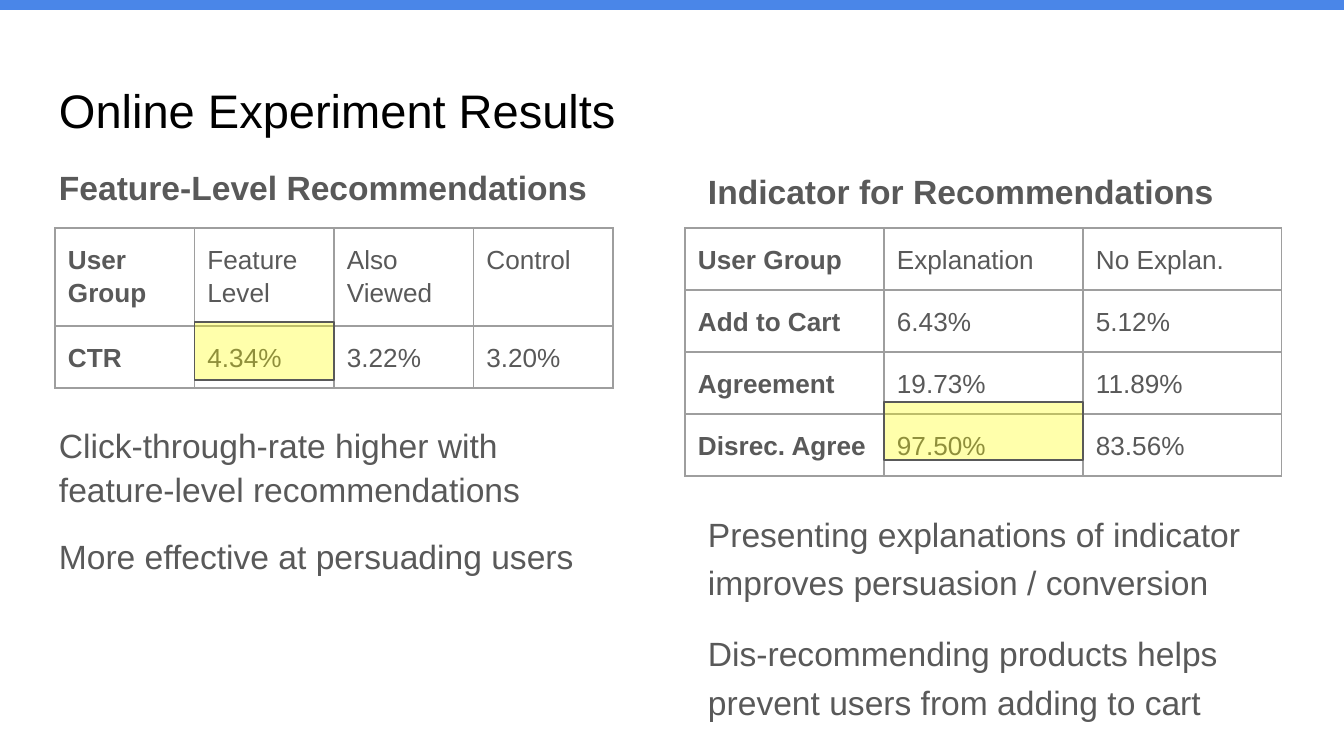
from lxml import etree
from pptx import Presentation
from pptx import util as u
from pptx.dml.color import RGBColor
from pptx.enum import shapes, text
from pptx.oxml import ns

PX = 914400 / 134.4
PAD = 13
GREY, BORDER, BLUE, YELLOW = "595959", "9E9E9E", "4A86E8", "FFFF00"


def px(length):
    return u.Emu(round(length * PX))


def color(value):
    return RGBColor.from_string(value)


def set_all(target, values):
    for name, value in values.items():
        setattr(target, name, value)


def write(frame, lines, size, ink=GREY, bold=False, spacing=1.0, gap=0, anchor=text.MSO_ANCHOR.TOP):
    margins = {f"margin_{side}": px(PAD) for side in ("left", "top", "right", "bottom")}
    set_all(frame, {"word_wrap": True, "vertical_anchor": anchor, **margins})
    for index, line in enumerate(lines):
        para = frame.add_paragraph() if index else frame.paragraphs[0]
        set_all(para, {"line_spacing": spacing, "space_before": u.Pt(gap if index else 0)})
        span = para.add_run()
        span.text = line
        set_all(span.font, {"name": "Arial", "size": u.Pt(size), "bold": bold})
        span.font.color.rgb = color(ink)


def add_text(page, box, lines, size, **style):
    frame = page.shapes.add_textbox(*map(px, box)).text_frame
    write(frame, lines, size, **style)


def add_box(page, box, fill, line=None, opacity=None):
    shape = page.shapes.add_shape(shapes.MSO_SHAPE.RECTANGLE, *map(px, box))
    shape.shadow.inherit = False
    shape.fill.solid()
    shape.fill.fore_color.rgb = color(fill)
    if opacity:
        tint = shape.fill._xPr.find(".//" + ns.qn("a:srgbClr"))
        etree.SubElement(tint, ns.qn("a:alpha"), val=str(opacity * 1000))
    if line:
        shape.line.color.rgb = color(line)
        shape.line.width = u.Pt(0.75)
    else:
        shape.line.fill.background()


def add_borders(cell):
    properties = cell._tc.get_or_add_tcPr()
    for index, side in enumerate(("lnL", "lnR", "lnT", "lnB")):
        edge = etree.Element(ns.qn(f"a:{side}"), w=str(u.Pt(0.75)))
        fill = etree.SubElement(edge, ns.qn("a:solidFill"))
        etree.SubElement(fill, ns.qn("a:srgbClr"), val=BORDER)
        properties.insert(index, edge)


def results_table(page, box, rows, heights):
    left, top, width = box
    table = page.shapes.add_table(
        len(rows), len(rows[0]), *map(px, (left, top, width, sum(heights)))).table
    set_all(table, {"first_row": False, "horz_banding": False})
    for r, (row, height) in enumerate(zip(rows, heights)):
        table.rows[r].height = px(height)
        for c, value in enumerate(row):
            cell = table.cell(r, c)
            cell.fill.background()
            add_borders(cell)
            write(cell.text_frame, [value], 14, bold=c == 0, spacing=1.15)
            set_all(cell, {f"margin_{side}": px(PAD) for side in ("left", "top", "right", "bottom")})


def results_panel(page, box, panel):
    """Heading, table with one highlighted cell, and findings."""
    left, top, width, height = box
    spacing, findings_top = panel["spacing"], panel["findings_top"]
    add_text(page, (left, top, width, 66), [panel["heading"]], 18, bold=True, spacing=spacing)
    add_text(page, (left, top + findings_top, width, height - findings_top),
             panel["findings"], 18, spacing=spacing, gap=12)

    # Table and highlight
    table_left, table_top = left + panel["table_shift"], top + 78
    rows, table_width = panel["rows"], panel["table_width"]
    results_table(page, (table_left, table_top, table_width), rows, panel["heights"])
    column = table_width / len(rows[0])
    add_box(page, (table_left + column, top + panel["highlight_top"], column, 58),
            YELLOW, line=GREY, opacity=33)


FEATURE_LEVEL = {
    "heading": "Feature-Level Recommendations",
    "spacing": 1.1,
    "table_shift": 9,
    "table_width": 558,
    "heights": [94, 61],
    "rows": [["User Group", "Feature Level", "Also Viewed", "Control"],
             ["CTR", "4.34%", "3.22%", "3.20%"]],
    "highlight_top": 172,
    "findings_top": 258,
    "findings": ["Click-through-rate higher with feature-level recommendations",
                 "More effective at persuading users"],
}
INDICATOR = {
    "heading": "Indicator for Recommendations",
    "spacing": 1.2,
    "table_shift": -10,
    "table_width": 597,
    "heights": [61, 60, 61, 60],
    "rows": [["User Group", "Explanation", "No Explan."],
             ["Add to Cart", "6.43%", "5.12%"],
             ["Agreement", "19.73%", "11.89%"],
             ["Disrec. Agree", "97.50%", "83.56%"]],
    "highlight_top": 252,
    "findings_top": 343,
    "findings": ["Presenting explanations of indicator improves persuasion / conversion",
                 "Dis-recommending products helps prevent users from adding to cart"],
}


def main():
    deck = Presentation()
    set_all(deck, {"slide_width": px(1344), "slide_height": px(756)})
    page = deck.slides.add_slide(deck.slide_layouts[6])

    # Title and top bar
    add_text(page, (46, 66, 1252, 85), ["Online Experiment Results"], 25.2,
             ink="000000", anchor=text.MSO_ANCHOR.BOTTOM)
    add_box(page, (0, 0, 1344, 10), BLUE)

    # Two result panels
    results_panel(page, (46, 150, 587, 500), FEATURE_LEVEL)
    results_panel(page, (695, 150, 587, 595), INDICATOR)
    deck.save("out.pptx")


if __name__ == "__main__":
    main()
